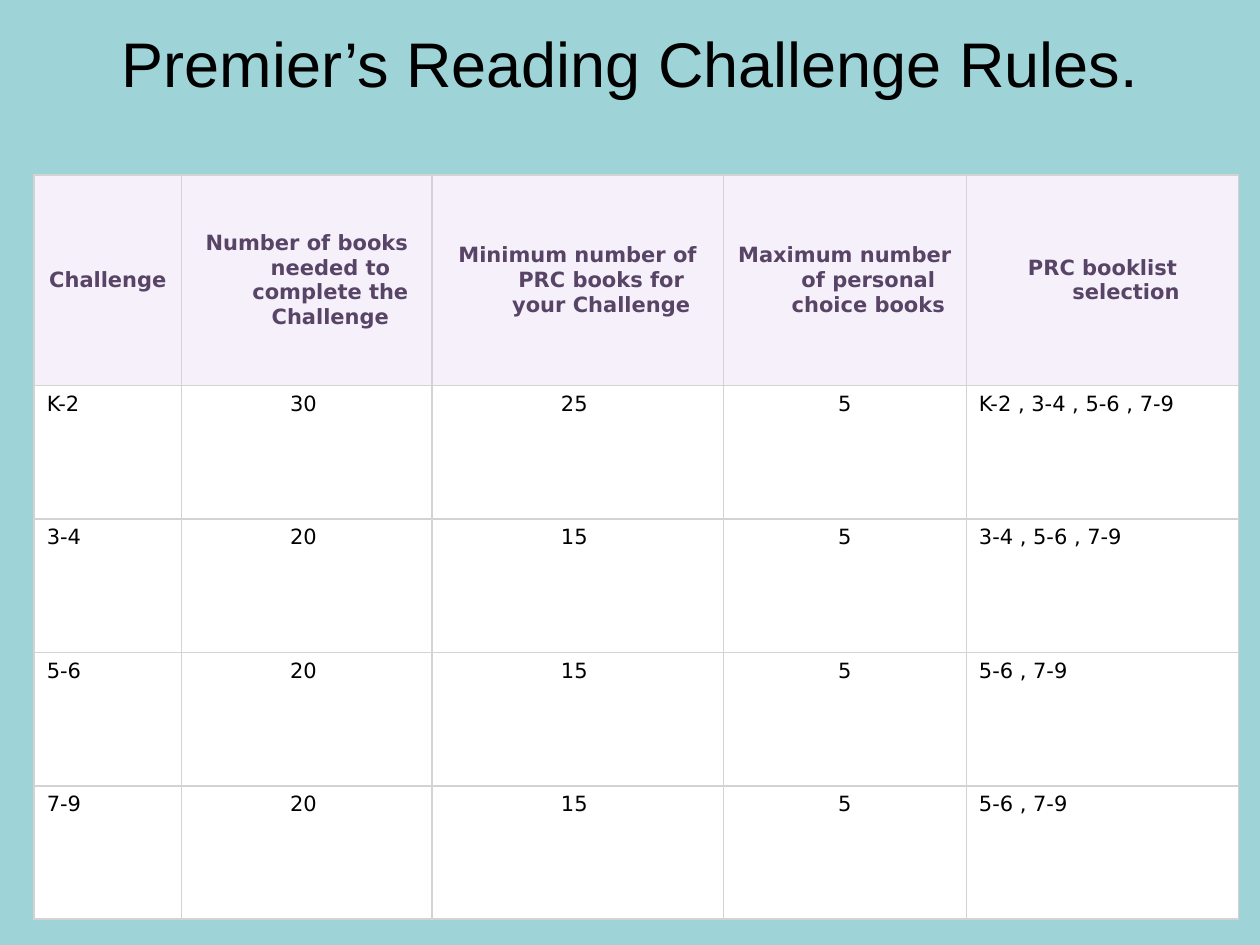
from lxml import etree
from pptx import Presentation
from pptx.dml.color import RGBColor
from pptx.enum.text import MSO_ANCHOR, PP_ALIGN
from pptx.oxml.ns import qn
from pptx.util import Cm, Pt

LEFT, CENTER = PP_ALIGN.LEFT, PP_ALIGN.CENTER
TOP, MIDDLE = MSO_ANCHOR.TOP, MSO_ANCHOR.MIDDLE
COLORS = {
    "back": "9ED3D7",
    "head": "F5F0F9",
    "label": "584466",
    "body": "FFFFFF",
    "text": "000000",
    "rule": "D3D3D3",
}
INDENT = Cm(0.95)
WIDTHS = [2.97, 5.05, 5.87, 4.9, 5.49]
HEIGHTS = [4.24] + [2.69] * 4
ALIGNS = [LEFT, CENTER, CENTER, CENTER, LEFT]
ROWS = [
    ["Challenge", "Number of books needed to complete the Challenge",
     "Minimum number of PRC books for your Challenge",
     "Maximum number of personal choice books", "PRC booklist selection"],
    ["K-2", "30 ", "25 ", "5", "K-2 , 3-4 , 5-6 , 7-9"],
    ["3-4", "20 ", "15 ", "5", "3-4 , 5-6 , 7-9"],
    ["5-6", "20 ", "15 ", "5", "5-6 , 7-9"],
    ["7-9", "20 ", "15 ", "5", "5-6 , 7-9"],
]


def color(name):
    """Return the named colour."""
    return RGBColor.from_string(COLORS[name])


def style(para, face, size, tint, align, bold=False):
    """Set the font and alignment of a paragraph."""
    para.alignment = align
    font = para.font
    font.name, font.size, font.bold = face, Pt(size), bold
    font.color.rgb = color(tint)


def add_title(slide, text, left, top, width, height):
    """Write the centred slide title in its box."""
    box = slide.shapes.add_textbox(Cm(left), Cm(top), Cm(width), Cm(height))
    frame = box.text_frame
    frame.word_wrap = True
    frame.vertical_anchor = MIDDLE
    frame.text = text
    style(frame.paragraphs[0], "Arial", 36, "text", CENTER)


def add_edges(cell):
    """Draw a thin rule on all four sides of a cell."""
    props = cell._tc.get_or_add_tcPr()
    for spot, side in enumerate(("lnL", "lnR", "lnT", "lnB")):
        line = etree.Element(qn(f"a:{side}"), w=str(Pt(1)))
        fill = etree.SubElement(line, qn("a:solidFill"))
        etree.SubElement(fill, qn("a:srgbClr"), val=COLORS["rule"])
        props.insert(spot, line)


def fill_cell(cell, text, head, align):
    """Write and format one cell."""
    cell.text = text
    cell.vertical_anchor = MIDDLE if head else TOP
    cell.fill.solid()
    cell.fill.fore_color.rgb = color("head" if head else "body")
    add_edges(cell)
    para = cell.text_frame.paragraphs[0]
    props = para._p.get_or_add_pPr()
    props.set("marL", str(INDENT))
    props.set("indent", str(-INDENT))
    style(para, "DejaVu Sans", 12, "label" if head else "text",
          CENTER if head else align, head)


def add_rules(slide, left, top):
    """Build the table of challenge rules from its top left corner."""
    frame = slide.shapes.add_table(len(ROWS), len(WIDTHS), Cm(left), Cm(top),
                                   Cm(sum(WIDTHS)), Cm(sum(HEIGHTS)))
    table = frame.table
    for col, width in zip(table.columns, WIDTHS):
        col.width = Cm(width)
    for r, (row, height) in enumerate(zip(ROWS, HEIGHTS)):
        table.rows[r].height = Cm(height)
        for c, (text, align) in enumerate(zip(row, ALIGNS)):
            fill_cell(table.cell(r, c), text, r == 0, align)


def main():
    """Build the slide and save it."""
    deck = Presentation()
    deck.slide_width, deck.slide_height = Cm(25.4), Cm(19.05)
    slide = deck.slides.add_slide(deck.slide_layouts[6])
    back = slide.background.fill
    back.solid()
    back.fore_color.rgb = color("back")
    add_title(slide, "Premier’s Reading Challenge Rules.", 1.27, 0, 22.86, 2.51)
    add_rules(slide, 0.69, 3.53)
    deck.save("out.pptx")


if __name__ == "__main__":
    main()
